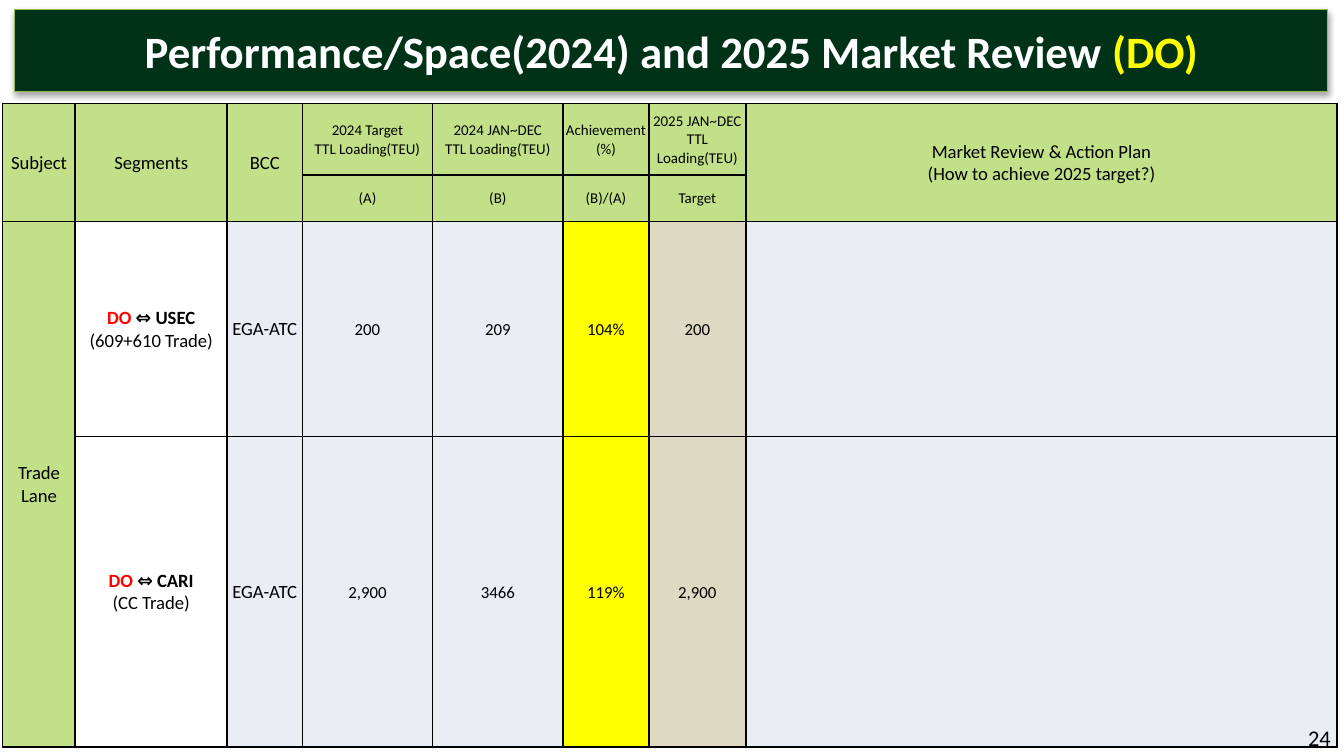
from lxml import etree
from pptx import Presentation
from pptx.dml.color import RGBColor
from pptx.enum.shapes import MSO_SHAPE
from pptx.enum.text import MSO_ANCHOR, PP_ALIGN
from pptx.oxml import parse_xml
from pptx.oxml.ns import nsdecls, qn
from pptx.util import Inches, Pt

CENTER, RIGHT = PP_ALIGN.CENTER, PP_ALIGN.RIGHT
MIDDLE = MSO_ANCHOR.MIDDLE
RECTANGLE = MSO_SHAPE.RECTANGLE

BLACK = RGBColor(0x00, 0x00, 0x00)
WHITE = RGBColor(0xFF, 0xFF, 0xFF)
RED = RGBColor(0xFF, 0x00, 0x00)
YELLOW = RGBColor(0xFF, 0xFF, 0x00)
DARK_GREEN = RGBColor(0x00, 0x32, 0x17)
EDGE_GREEN = RGBColor(0x98, 0xB9, 0x55)
HEADER_GREEN = RGBColor(0xC2, 0xE0, 0x88)
PALE_BLUE = RGBColor(0xE9, 0xED, 0xF4)
TAN = RGBColor(0xDD, 0xD9, 0xC3)
FONT = "Calibri"

# Content: each line of text is a list of (text, color, bold) spans
TITLE = [("Performance/Space(2024) and 2025 Market Review ", WHITE, True),
         ("(DO)", YELLOW, True)]
PAGE_NUMBER = "24"

HEADINGS = ["Subject", "Segments", "BCC",
            "2024 Target\nTTL Loading(TEU)", "2024 JAN~DEC\nTTL Loading(TEU)",
            "Achievement\n(%)", "2025 JAN~DEC\nTTL Loading(TEU)",
            "Market Review & Action Plan\n(How to achieve 2025 target?)"]
SUBHEADINGS = ["", "", "", "(A)", "(B)", "(B)/(A)", "Target", ""]
LANES = [
    ("Trade Lane", "USEC", "(609+610 Trade)", ["EGA-ATC", "200", "209", "104%", "200", ""]),
    ("", "CARI", "(CC Trade)", ["EGA-ATC", "2,900", "3466", "119%", "2,900", ""]),
]

COLUMN_WIDTHS = [0.54, 1.13, 0.56, 0.97, 0.97, 0.64, 0.72, 4.4]
ROW_HEIGHTS = [0.53, 0.34, 1.6, 2.31]
LANE_FILLS = [HEADER_GREEN, None, PALE_BLUE, PALE_BLUE, PALE_BLUE, YELLOW, TAN, PALE_BLUE]
HEADING_SIZES = [10, 10, 10, 8, 8, 8, 8, 10]
LANE_SIZES = [10, 10, 10, 9, 9, 9, 9, 10]
TALL_HEADINGS = [0, 1, 2, 7]


def plain(text):
    return [[(line, BLACK, False)] for line in text.split("\n")] if text else []


def write(frame, lines, size, align):
    for index, line in enumerate(lines):
        para = frame.paragraphs[0] if index == 0 else frame.add_paragraph()
        para.alignment = align
        for text, color, bold in line:
            span = para.add_run()
            span.text = text
            span.font.name = FONT
            span.font.size = Pt(size)
            span.font.bold = bold
            span.font.color.rgb = color


def style_cell(cell, fill):
    cell.margin_left = cell.margin_top = cell.margin_right = Inches(0.01)
    cell.margin_bottom = 0
    cell.vertical_anchor = MIDDLE
    if fill is None:
        cell.fill.background()
    else:
        cell.fill.solid()
        cell.fill.fore_color.rgb = fill
    # Borders come before the fill in the cell properties
    properties = cell._tc.get_or_add_tcPr()
    for index, side in enumerate(("lnL", "lnR", "lnT", "lnB")):
        properties.insert(index, parse_xml(
            f'<a:{side} {nsdecls("a")} w="{Pt(1)}"><a:solidFill>'
            f'<a:srgbClr val="{BLACK}"/></a:solidFill></a:{side}>'))


def add_shadow(shape):
    effects = shape._element.spPr.find(qn("a:effectLst"))
    shadow = etree.SubElement(effects, qn("a:outerShdw"), blurRad=str(Pt(3.1)),
                              dist=str(Pt(1.8)), dir="5400000", rotWithShape="0")
    color = etree.SubElement(shadow, qn("a:srgbClr"), val=str(BLACK))
    etree.SubElement(color, qn("a:alpha"), val="35000")


# Widescreen slide, 16:9
deck = Presentation()
deck.slide_width = Inches(10)
deck.slide_height = Inches(10 * 9 / 16)
slide = deck.slides.add_slide(deck.slide_layouts[6])

# Review table
rows = [[plain(text) for text in HEADINGS], [plain(text) for text in SUBHEADINGS]]
for subject, region, trade, values in LANES:
    segment = [[("DO ", RED, True), (f"⇔ {region}", BLACK, True)],
               [(trade, BLACK, False)]]
    rows.append([plain(subject), segment] + [plain(text) for text in values])

table = slide.shapes.add_table(
    len(rows), len(COLUMN_WIDTHS), Inches(0.02), Inches(0.77),
    Inches(sum(COLUMN_WIDTHS)), Inches(sum(ROW_HEIGHTS))).table
for column, width in zip(table.columns, COLUMN_WIDTHS):
    column.width = Inches(width)
for row, height in zip(table.rows, ROW_HEIGHTS):
    row.height = Inches(height)

for r, row in enumerate(rows):
    is_heading = r < 2
    sizes = HEADING_SIZES if is_heading else LANE_SIZES
    for c, lines in enumerate(row):
        cell = table.cell(r, c)
        style_cell(cell, HEADER_GREEN if is_heading else LANE_FILLS[c])
        write(cell.text_frame, lines, sizes[c], CENTER)

for c in TALL_HEADINGS:
    table.cell(0, c).merge(table.cell(1, c))
table.cell(2, 0).merge(table.cell(3, 0))

# Page number
number_box = slide.shapes.add_textbox(Inches(7.67), Inches(5.34), Inches(2.33), Inches(0.3))
number_box.text_frame.word_wrap = True
write(number_box.text_frame, plain(PAGE_NUMBER), 12, RIGHT)

# Title banner
banner = slide.shapes.add_shape(RECTANGLE, Inches(0.11), Inches(0.07), Inches(9.77), Inches(0.61))
banner.shadow.inherit = False
banner.fill.solid()
banner.fill.fore_color.rgb = DARK_GREEN
banner.line.color.rgb = EDGE_GREEN
banner.line.width = Pt(0.75)
add_shadow(banner)
banner.text_frame.word_wrap = True
banner.text_frame.vertical_anchor = MIDDLE
write(banner.text_frame, [TITLE], 24, CENTER)

deck.save("out.pptx")
